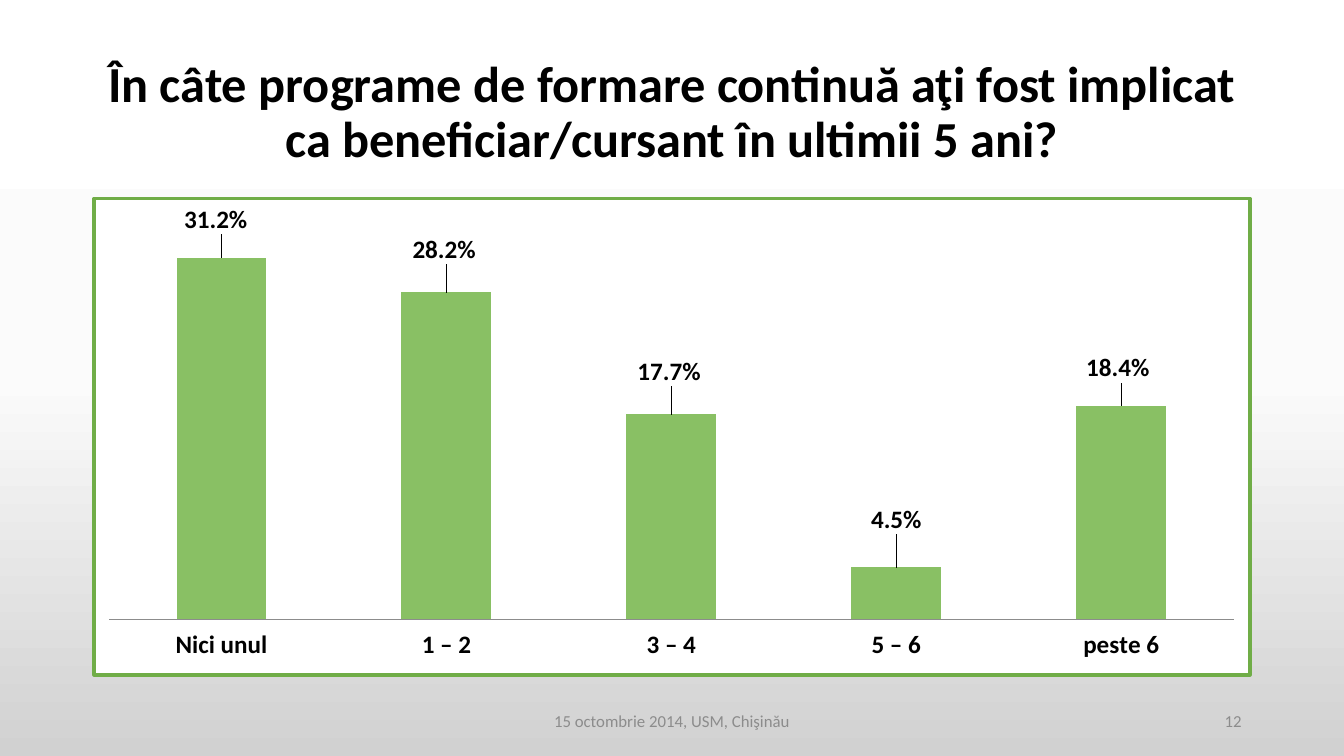
from lxml.etree import SubElement
from pptx import Presentation
from pptx.chart.data import CategoryChartData
from pptx.dml.color import RGBColor
from pptx.enum.chart import XL_CHART_TYPE, XL_LABEL_POSITION, XL_TICK_LABEL_POSITION, XL_TICK_MARK
from pptx.enum.text import MSO_ANCHOR, MSO_AUTO_SIZE, PP_ALIGN
from pptx.oxml import parse_xml
from pptx.oxml.ns import nsdecls, qn
from pptx.util import Cm, Pt

FONT = "Calibri"
BLACK = RGBColor(0x00, 0x00, 0x00)
WHITE = RGBColor(0xFF, 0xFF, 0xFF)
NEAR_WHITE = RGBColor(0xFB, 0xFB, 0xFB)
LIGHT_GRAY = RGBColor(0xD1, 0xD1, 0xD1)
FOOTER_GRAY = RGBColor(0x8C, 0x8C, 0x8C)
BAR_GREEN = RGBColor(0x89, 0xC0, 0x64)
FRAME_GREEN = RGBColor(0x70, 0xAD, 0x47)

PERCENT = "0.0%"
MARGIN = Cm(2.33)
CONTENT_WIDTH = Cm(29.21)
TITLE = "În câte programe de formare continuă aţi fost implicat ca beneficiar/cursant în ultimii 5 ani?"
# Programme count, share of answers, label shift as fractions of the chart
ANSWERS = [
    ("Nici unul", 0.312, (-0.005, -0.04)),
    ("1 – 2", 0.282, (-0.002, -0.05)),
    ("3 – 4", 0.177, (-0.002, -0.05)),
    ("5 – 6", 0.045, (0, -0.06)),
    ("peste 6", 0.184, (-0.003, -0.04)),
]


def format_font(font, size, color, bold=False):
    font.name = FONT
    font.size = Pt(size)
    font.bold = bold
    font.color.rgb = color


def set_background(slide):
    fill = slide.background.fill
    fill.gradient()
    fill.gradient_angle = 270
    stops = slide.element.find(".//" + qn("a:gsLst"))
    for stop in list(stops):
        stops.remove(stop)
    for percent, color in ((0, WHITE), (50, NEAR_WHITE), (100, LIGHT_GRAY)):
        stop = SubElement(stops, qn("a:gs"), pos=str(percent * 1000))
        SubElement(stop, qn("a:srgbClr"), val=str(color))


def set_title(slide):
    title = slide.shapes.title
    title.left, title.top = MARGIN, Cm(1.02)
    title.width, title.height = CONTENT_WIDTH, Cm(3.68)
    text_frame = title.text_frame
    text_frame.text = TITLE
    text_frame.auto_size = MSO_AUTO_SIZE.NONE
    text_frame.vertical_anchor = MSO_ANCHOR.MIDDLE
    paragraph = text_frame.paragraphs[0]
    paragraph.alignment = PP_ALIGN.CENTER
    paragraph.line_spacing = 0.9
    format_font(paragraph.runs[0].font, 36, BLACK, bold=True)


def add_footer_text(slide, text, left, width, alignment):
    text_frame = slide.shapes.add_textbox(left, Cm(17.65), width, Cm(1.02)).text_frame
    text_frame.word_wrap = True
    text_frame.vertical_anchor = MSO_ANCHOR.MIDDLE
    text_frame.text = text
    paragraph = text_frame.paragraphs[0]
    paragraph.alignment = alignment
    format_font(paragraph.runs[0].font, 12, FOOTER_GRAY)


def manual_layout(**settings):
    layout = parse_xml(f"<c:layout {nsdecls('c')}><c:manualLayout/></c:layout>")
    for name, value in settings.items():
        SubElement(layout[0], qn(f"c:{name}"), val=str(value))
    return layout


def frame_chart(chart):
    """Give the chart area a white fill and a green border."""
    chart.element.find(qn("c:chart")).addnext(parse_xml(
        f"<c:spPr {nsdecls('c', 'a')}>"
        f'<a:solidFill><a:srgbClr val="{WHITE}"/></a:solidFill>'
        f'<a:ln w="{Pt(2.25)}"><a:solidFill><a:srgbClr val="{FRAME_GREEN}"/></a:solidFill></a:ln>'
        "</c:spPr>"))


def place_plot(chart):
    plot_area = chart.element.find(".//" + qn("c:plotArea"))
    for layout in plot_area.findall(qn("c:layout")):
        plot_area.remove(layout)
    plot_area.insert(0, manual_layout(
        layoutTarget="inner", xMode="edge", yMode="edge", x=0.013, y=0.032, w=0.973, h=0.851))


def format_axes(chart):
    category_axis = chart.category_axis
    category_axis.major_tick_mark = XL_TICK_MARK.NONE
    category_axis.tick_label_position = XL_TICK_LABEL_POSITION.LOW
    category_axis.format.line.color.rgb = FOOTER_GRAY
    format_font(category_axis.tick_labels.font, 18, BLACK, bold=True)
    value_axis = chart.value_axis
    value_axis.minimum_scale = 0
    value_axis.maximum_scale = 0.35
    value_axis.has_major_gridlines = False
    value_axis.tick_labels.number_format = PERCENT
    value_axis.tick_labels.number_format_is_linked = False
    value_axis.visible = False


def format_labels(chart, series):
    labels = series.data_labels
    labels.show_value = True
    labels.number_format = PERCENT
    labels.number_format_is_linked = False
    labels.position = XL_LABEL_POSITION.OUTSIDE_END
    format_font(labels.font, 18, BLACK, bold=True)
    for index in range(len(ANSWERS)):
        label = series.points[index].data_label
        label.position = XL_LABEL_POSITION.OUTSIDE_END
        format_font(label.font, 18, BLACK, bold=True)
    for element, (_, _, (shift_x, shift_y)) in zip(chart.element.iter(qn("c:dLbl")), ANSWERS):
        element.insert(1, manual_layout(x=shift_x, y=shift_y))
        element.insert(2, parse_xml(
            f'<c:numFmt {nsdecls("c")} formatCode="{PERCENT}" sourceLinked="0"/>'))


def add_answers_chart(slide):
    chart_data = CategoryChartData(number_format=PERCENT)
    chart_data.categories = [category for category, _, _ in ANSWERS]
    chart_data.add_series("Series 1", [share for _, share, _ in ANSWERS])
    chart = slide.shapes.add_chart(
        XL_CHART_TYPE.COLUMN_CLUSTERED, MARGIN, Cm(4.96), CONTENT_WIDTH, Cm(12.09), chart_data).chart
    chart.has_legend = False
    chart.has_title = False
    format_font(chart.font, 10, BLACK)
    plot = chart.plots[0]
    plot.gap_width = 150
    plot.vary_by_categories = False
    series = plot.series[0]
    series.format.fill.solid()
    series.format.fill.fore_color.rgb = BAR_GREEN
    format_axes(chart)
    format_labels(chart, series)
    place_plot(chart)
    frame_chart(chart)


def main():
    presentation = Presentation()
    presentation.slide_width = Cm(33.87)
    presentation.slide_height = Cm(19.05)
    slide = presentation.slides.add_slide(presentation.slide_layouts[5])
    set_background(slide)
    set_title(slide)
    add_answers_chart(slide)
    add_footer_text(slide, "15 octombrie 2014, USM, Chişinău", Cm(11.22), Cm(11.43), PP_ALIGN.CENTER)
    add_footer_text(slide, "12", Cm(23.92), Cm(7.62), PP_ALIGN.RIGHT)
    presentation.save("out.pptx")


if __name__ == "__main__":
    main()
